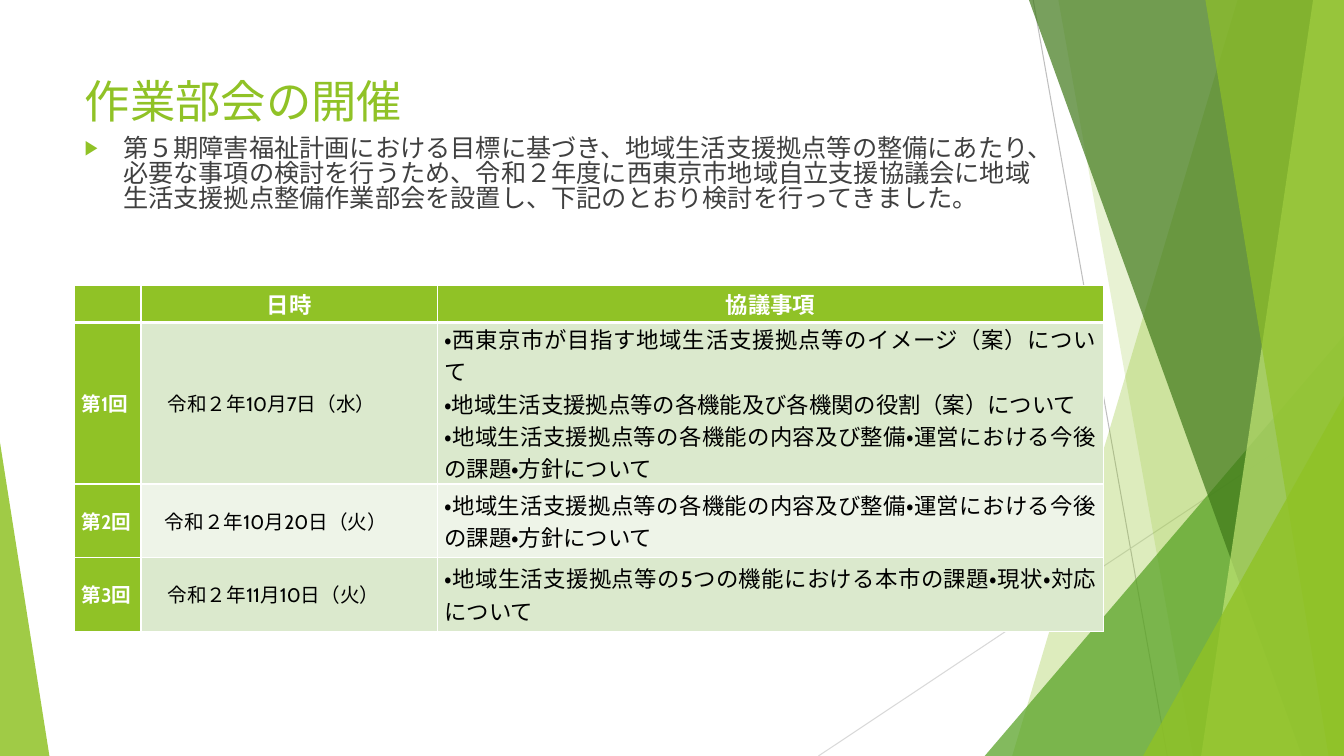
"""Build the slide that lists the working group meetings."""

from dataclasses import dataclass

from lxml.etree import SubElement
from pptx import Presentation
from pptx.dml.color import RGBColor
from pptx.enum.lang import MSO_LANGUAGE_ID
from pptx.enum.shapes import MSO_CONNECTOR, MSO_SHAPE
from pptx.enum.text import MSO_ANCHOR, MSO_AUTO_SIZE, PP_ALIGN
from pptx.oxml.ns import qn
from pptx.util import Pt

FONT = "Cabin"
WIDTH, HEIGHT = 960, 540
COLORS = {
    "white": "FFFFFF", "black": "000000", "body": "404040",
    "lime": "90C226", "green": "54A021", "forest": "3F7819", "pale": "C0E474",
    "band_dark": "DBE9CD", "band_light": "EEF4E8",
    "line_dark": "BFBFBF", "line_light": "D9D9D9",
}


@dataclass(frozen=True)
class Ray:
    """A thin line between two points."""

    start: tuple[float, float]
    end: tuple[float, float]
    color: str


@dataclass(frozen=True)
class Panel:
    """A full-height panel with a slanted left edge, ending at the right of the slide."""

    top_left: float
    bottom_left: float
    color: str
    opacity: int


@dataclass(frozen=True)
class Triangle:
    """A right-angled triangle standing on the bottom of the slide."""

    left: float
    top: float
    width: float
    apex: float
    color: str
    opacity: int


@dataclass(frozen=True)
class Meeting:
    """One meeting with its date and agenda."""

    number: str
    date: str
    indent: float
    topics: tuple[str, ...]
    height: float
    band: str


RAYS = (
    Ray((738, 0), (833.8, HEIGHT), "line_dark"),
    Ray((WIDTH, 290.2), (584.6, HEIGHT), "line_light"),
)
FACETS = (
    Panel(884.2, 722.9, "lime", 30),
    Panel(756, 851.8, "lime", 20),
    Triangle(703.4, 239.8, 256.6, 1, "green", 72),
    Panel(735.1, 929.5, "forest", 70),
    Panel(938.2, 858.2, "pale", 70),
    Panel(861.1, 949, "lime", 65),
    Triangle(816.5, 283, 143.5, 1, "lime", 80),
    Triangle(0, 316.1, 35.3, 0, "lime", 85),
)
TITLE = "作業部会の開催"
BODY = (
    "第５期障害福祉計画における目標に基づき、地域生活支援拠点等の整備にあたり、"
    "必要な事項の検討を行うため、令和２年度に西東京市地域自立支援協議会に"
    "地域生活支援拠点整備作業部会を設置し、下記のとおり検討を行ってきました。"
)
HEADINGS = ("", "日時", "協議事項")
OPERATION_TOPIC = "・地域生活支援拠点等の各機能の内容及び整備・運営における今後の課題・方針について"
MEETINGS = (
    Meeting("第1回", "令和２年10月7日（水）", 14, (
        "・西東京市が目指す地域生活支援拠点等のイメージ（案）について",
        "・地域生活支援拠点等の各機能及び各機関の役割（案）について",
        OPERATION_TOPIC,
    ), 113.8, "band_dark"),
    Meeting("第2回", "令和２年10月20日（火）", 12, (OPERATION_TOPIC,), 52.6, "band_light"),
    Meeting("第3回", "令和２年11月10日（火）", 14, (
        "・地域生活支援拠点等の5つの機能における本市の課題・現状・対応について",
    ), 52.6, "band_dark"),
)
HEADER_HEIGHT = 26.6
COLUMN_WIDTHS = (47.5, 211.7, 475.9)


def rgb(name: str) -> RGBColor:
    """Return the named colour."""
    return RGBColor.from_string(COLORS[name])


def write_text(frame, *lines: str, size: float, color: str, bold: bool = False,
               align=PP_ALIGN.LEFT, anchor=MSO_ANCHOR.MIDDLE, indent: float = 0) -> None:
    """Fill a text frame with one formatted paragraph for each line."""
    frame.word_wrap = True
    frame.vertical_anchor = anchor
    for index, line in enumerate(lines):
        paragraph = frame.add_paragraph() if index else frame.paragraphs[0]
        paragraph.alignment = align
        if indent:
            paragraph._p.get_or_add_pPr().set("indent", str(Pt(indent)))
        run = paragraph.add_run()
        run.text = line
        font = run.font
        font.name, font.size, font.bold = FONT, Pt(size), bold
        font.color.rgb = rgb(color)
        font.language_id = MSO_LANGUAGE_ID.JAPANESE


def draw_ray(slide, ray: Ray) -> None:
    """Draw a thin line without a shadow."""
    points = [Pt(value) for value in (*ray.start, *ray.end)]
    connector = slide.shapes.add_connector(MSO_CONNECTOR.STRAIGHT, *points)
    connector.line.color.rgb = rgb(ray.color)
    connector.line.width = Pt(0.75)
    SubElement(connector.element.spPr, qn("a:effectLst"))


def draw_facet(slide, facet: Panel | Triangle) -> None:
    """Draw a translucent panel or triangle."""
    if isinstance(facet, Panel):
        builder = slide.shapes.build_freeform(facet.top_left, 0, scale=Pt(1))
        builder.add_line_segments(
            [(WIDTH, 0), (WIDTH, HEIGHT), (facet.bottom_left, HEIGHT)], close=True)
        shape = builder.convert_to_shape()
    else:
        shape = slide.shapes.add_shape(
            MSO_SHAPE.ISOSCELES_TRIANGLE, Pt(facet.left), Pt(facet.top),
            Pt(facet.width), Pt(HEIGHT - facet.top))
        shape.adjustments[0] = facet.apex
    shape.shadow.inherit = False
    shape.line.fill.background()
    shape.fill.solid()
    shape.fill.fore_color.rgb = rgb(facet.color)
    color = shape.element.spPr.find(f".//{qn('a:srgbClr')}")
    SubElement(color, qn("a:alpha"), val=str(facet.opacity * 1000))


def place(slide, shape, left: float, top: float, width: float, height: float) -> None:
    """Position a placeholder in front of the shapes drawn so far."""
    shape.left, shape.top, shape.width, shape.height = map(Pt, (left, top, width, height))
    shape.text_frame.auto_size = MSO_AUTO_SIZE.NONE
    slide.shapes.element.append(shape.element)


def set_bullet(paragraph, hanging: float) -> None:
    """Give a paragraph a lime arrow bullet with a hanging indent."""
    properties = paragraph._p.get_or_add_pPr()
    properties.set("marL", str(Pt(hanging)))
    properties.set("indent", str(-Pt(hanging)))
    SubElement(SubElement(properties, qn("a:buClr")), qn("a:srgbClr"), val=COLORS["lime"])
    SubElement(properties, qn("a:buSzPct"), val="80000")
    SubElement(properties, qn("a:buChar"), char="▶")


def format_cell(cell, fill: str, top: float = 1, bottom: float = 1) -> None:
    """Set the margins, white borders and fill of a table cell."""
    cell.margin_left = cell.margin_right = Pt(5)
    cell.margin_top = cell.margin_bottom = Pt(0)
    properties = cell._tc.get_or_add_tcPr()
    for side, width in (("L", 1), ("R", 1), ("T", top), ("B", bottom)):
        border = SubElement(properties, qn(f"a:ln{side}"), w=str(Pt(width)))
        SubElement(SubElement(border, qn("a:solidFill")), qn("a:srgbClr"), val=COLORS["white"])
    cell.fill.solid()
    cell.fill.fore_color.rgb = rgb(fill)


def draw_meetings(slide) -> None:
    """Draw the table of meetings."""
    heights = (HEADER_HEIGHT, *(meeting.height for meeting in MEETINGS))
    table = slide.shapes.add_table(
        len(heights), len(COLUMN_WIDTHS), Pt(53.3), Pt(203.8),
        Pt(sum(COLUMN_WIDTHS)), Pt(sum(heights))).table
    table.horz_banding = False
    for column, width in zip(table.columns, COLUMN_WIDTHS):
        column.width = Pt(width)
    for row, height in zip(table.rows, heights):
        row.height = Pt(height)
    for cell, heading in zip(table.rows[0].cells, HEADINGS):
        format_cell(cell, "lime", bottom=3)
        write_text(cell.text_frame, heading, size=16, color="white", bold=True,
                   align=PP_ALIGN.CENTER)
        cell.vertical_anchor = MSO_ANCHOR.MIDDLE
    for index, meeting in enumerate(MEETINGS):
        cells = list(table.rows[index + 1].cells)
        for cell, fill in zip(cells, ("lime", meeting.band, meeting.band)):
            format_cell(cell, fill, top=1 if index else 3)
            cell.vertical_anchor = MSO_ANCHOR.MIDDLE
        number, date, topics = (cell.text_frame for cell in cells)
        write_text(number, meeting.number, size=14, color="white", bold=True,
                   align=PP_ALIGN.JUSTIFY)
        write_text(date, meeting.date, size=14, color="black", indent=meeting.indent)
        write_text(topics, *meeting.topics, size=16, color="black", align=PP_ALIGN.JUSTIFY)


def main() -> None:
    """Build and save the presentation."""
    presentation = Presentation()
    presentation.slide_width, presentation.slide_height = Pt(WIDTH), Pt(HEIGHT)
    slide = presentation.slides.add_slide(presentation.slide_layouts[1])
    for ray in RAYS:
        draw_ray(slide, ray)
    for facet in FACETS:
        draw_facet(slide, facet)
    title, body = slide.shapes.title, slide.placeholders[1]
    place(slide, title, 53.3, 48.2, 676.8, 46.8)
    write_text(title.text_frame, TITLE, size=32.4, color="lime")
    place(slide, body, 53.3, 95, 693.4, 80.6)
    write_text(body.text_frame, BODY, size=18, color="body", anchor=MSO_ANCHOR.TOP)
    paragraph = body.text_frame.paragraphs[0]
    paragraph.space_before = Pt(10)
    paragraph.line_spacing = 0.82
    set_bullet(paragraph, 27.4)
    draw_meetings(slide)
    presentation.save("out.pptx")


if __name__ == "__main__":
    main()
